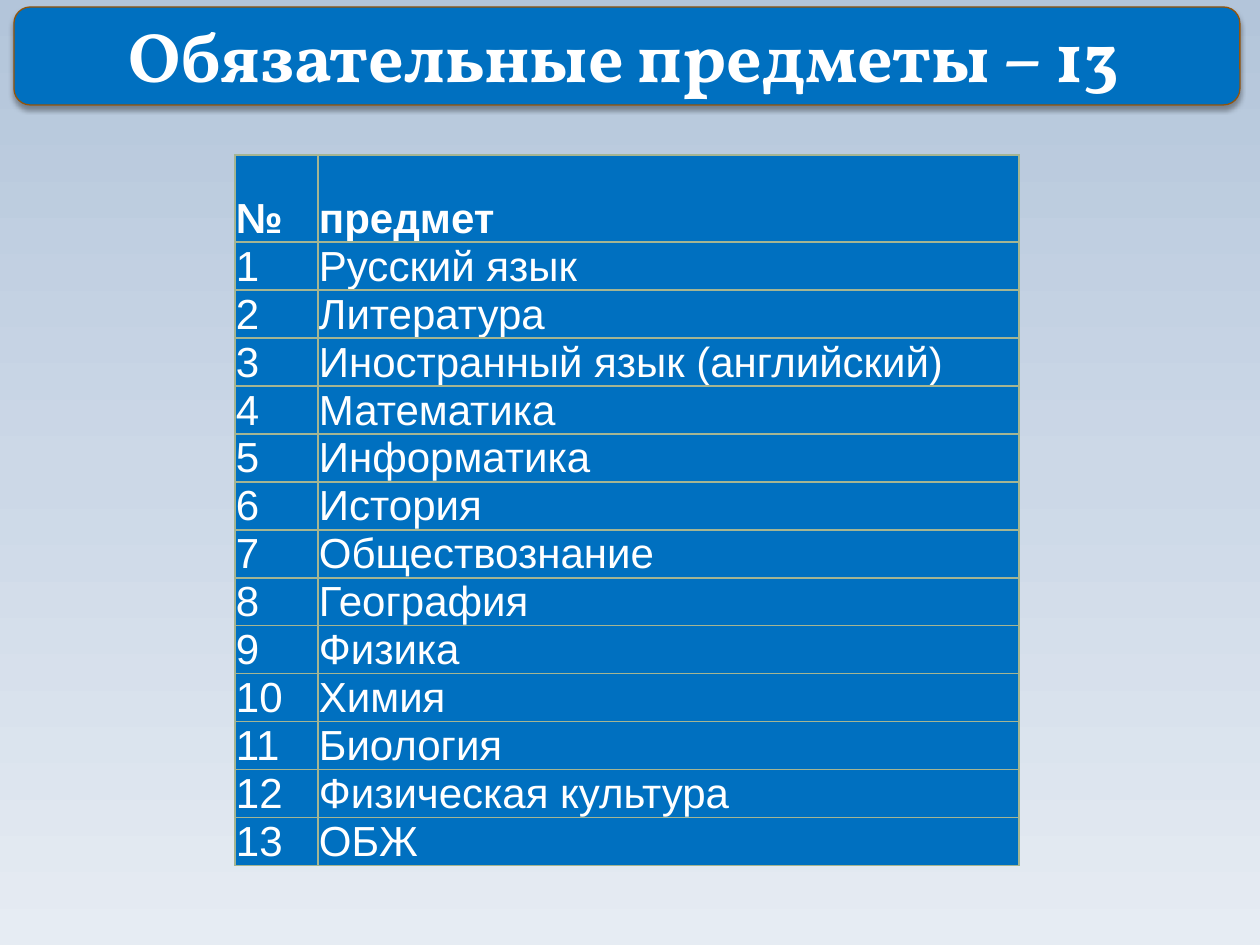
import copy
import dataclasses

import lxml.etree
import pptx
import pptx.dml.color
import pptx.enum.shapes
import pptx.enum.text
import pptx.oxml
import pptx.oxml.ns
import pptx.util

PX = pptx.util.Inches(1) // 126
SUBJECTS = [
    "Русский язык", "Литература", "Иностранный язык (английский)", "Математика",
    "Информатика", "История", "Обществознание", "География", "Физика", "Химия",
    "Биология", "Физическая культура", "ОБЖ",
]


@dataclasses.dataclass(frozen=True)
class Theme:
    blue: str = "0070C0"
    text: str = "FFFFFF"
    banner_line: str = "93540A"
    table_line: str = "A5B592"
    background: tuple = ("B3C5DA", "CCD8E7", "E6ECF3")
    title_font: str = "Vollkorn"
    title_size: int = 40
    body_font: str = "Arial"
    body_size: int = 24


def color(value):
    return pptx.dml.color.RGBColor.from_string(value)


def box(*lengths):
    return [length * PX for length in lengths]


class SlideBuilder:
    def __init__(self, slide, theme):
        self.slide = slide
        self.theme = theme

    def style_text(self, paragraph, font_name, size, bold):
        for run in paragraph.runs:
            run.font.name = font_name
            run.font.size = pptx.util.Pt(size)
            run.font.bold = bold
            run.font.color.rgb = color(self.theme.text)

    def background(self):
        fill = self.slide.background.fill
        fill.gradient()
        fill.gradient_angle = 270
        stops = self.slide.element.find(".//" + pptx.oxml.ns.qn("a:gsLst"))
        stops.insert(1, copy.deepcopy(stops[0]))
        for index, (stop, value) in enumerate(zip(fill.gradient_stops, self.theme.background)):
            stop.position = index / 2
            stop.color.rgb = color(value)

    def banner(self, left, top, width, height):
        shape = self.slide.shapes.add_shape(
            pptx.enum.shapes.MSO_SHAPE.ROUNDED_RECTANGLE, *box(left, top, width, height))
        shape.fill.solid()
        shape.fill.fore_color.rgb = color(self.theme.blue)
        shape.line.color.rgb = color(self.theme.banner_line)
        shape.line.width = pptx.util.Pt(0.75)
        shape.shadow.inherit = False
        effects = shape._element.spPr.find(pptx.oxml.ns.qn("a:effectLst"))
        effects.append(pptx.oxml.parse_xml(
            f'<a:outerShdw {pptx.oxml.ns.nsdecls("a")} blurRad="{pptx.util.Pt(3.1)}" '
            f'dist="{pptx.util.Pt(1.8)}" dir="5400000" rotWithShape="0">'
            '<a:srgbClr val="000000"><a:alpha val="35000"/></a:srgbClr></a:outerShdw>'))

    def title(self, text, left, top, width, height):
        title = self.slide.shapes.title
        title.left, title.top, title.width, title.height = box(left, top, width, height)
        title.text_frame.text = text
        title.text_frame.vertical_anchor = pptx.enum.text.MSO_ANCHOR.MIDDLE
        paragraph = title.text_frame.paragraphs[0]
        paragraph.alignment = pptx.enum.text.PP_ALIGN.CENTER
        self.style_text(paragraph, self.theme.title_font, self.theme.title_size, True)
        self.slide.shapes._spTree.append(title._element)

    def table(self, rows, left, top, column_widths, header_height, row_height):
        height = header_height + row_height * (len(rows) - 1)
        table = self.slide.shapes.add_table(
            len(rows), len(column_widths),
            *box(left, top, sum(column_widths), height)).table
        for column, width in zip(table.columns, column_widths):
            column.width = width * PX
        for row_index, values in enumerate(rows):
            is_header = row_index == 0
            table.rows[row_index].height = (header_height if is_header else row_height) * PX
            for column_index, value in enumerate(values):
                self.cell(table.cell(row_index, column_index), value, is_header)

    def cell(self, cell, text, bold):
        cell.text_frame.text = text
        cell.vertical_anchor = pptx.enum.text.MSO_ANCHOR.BOTTOM
        cell.margin_left = cell.margin_right = cell.margin_top = PX
        cell.margin_bottom = 0
        self.style_text(
            cell.text_frame.paragraphs[0], self.theme.body_font, self.theme.body_size, bold)
        properties = cell._tc.get_or_add_tcPr()
        for side in ("lnL", "lnR", "lnT", "lnB"):
            line = lxml.etree.SubElement(
                properties, pptx.oxml.ns.qn(f"a:{side}"), w=str(pptx.util.Pt(1)))
            line_fill = lxml.etree.SubElement(line, pptx.oxml.ns.qn("a:solidFill"))
            lxml.etree.SubElement(
                line_fill, pptx.oxml.ns.qn("a:srgbClr"), val=self.theme.table_line)
        cell.fill.solid()
        cell.fill.fore_color.rgb = color(self.theme.blue)


def main():
    presentation = pptx.Presentation()
    presentation.slide_width, presentation.slide_height = box(1260, 945)
    slide = presentation.slides.add_slide(presentation.slide_layouts.get_by_name("Title Only"))
    builder = SlideBuilder(slide, Theme())
    builder.background()
    builder.banner(14, 7, 1226, 98)
    builder.title("Обязательные предметы – 13 ", 64, 5, 1134, 100)
    rows = [("№", "предмет")]
    rows += [(str(number), subject) for number, subject in enumerate(SUBJECTS, 1)]
    builder.table(rows, 235, 155, (83, 701), 87, 48)
    presentation.save("out.pptx")


if __name__ == "__main__":
    main()
